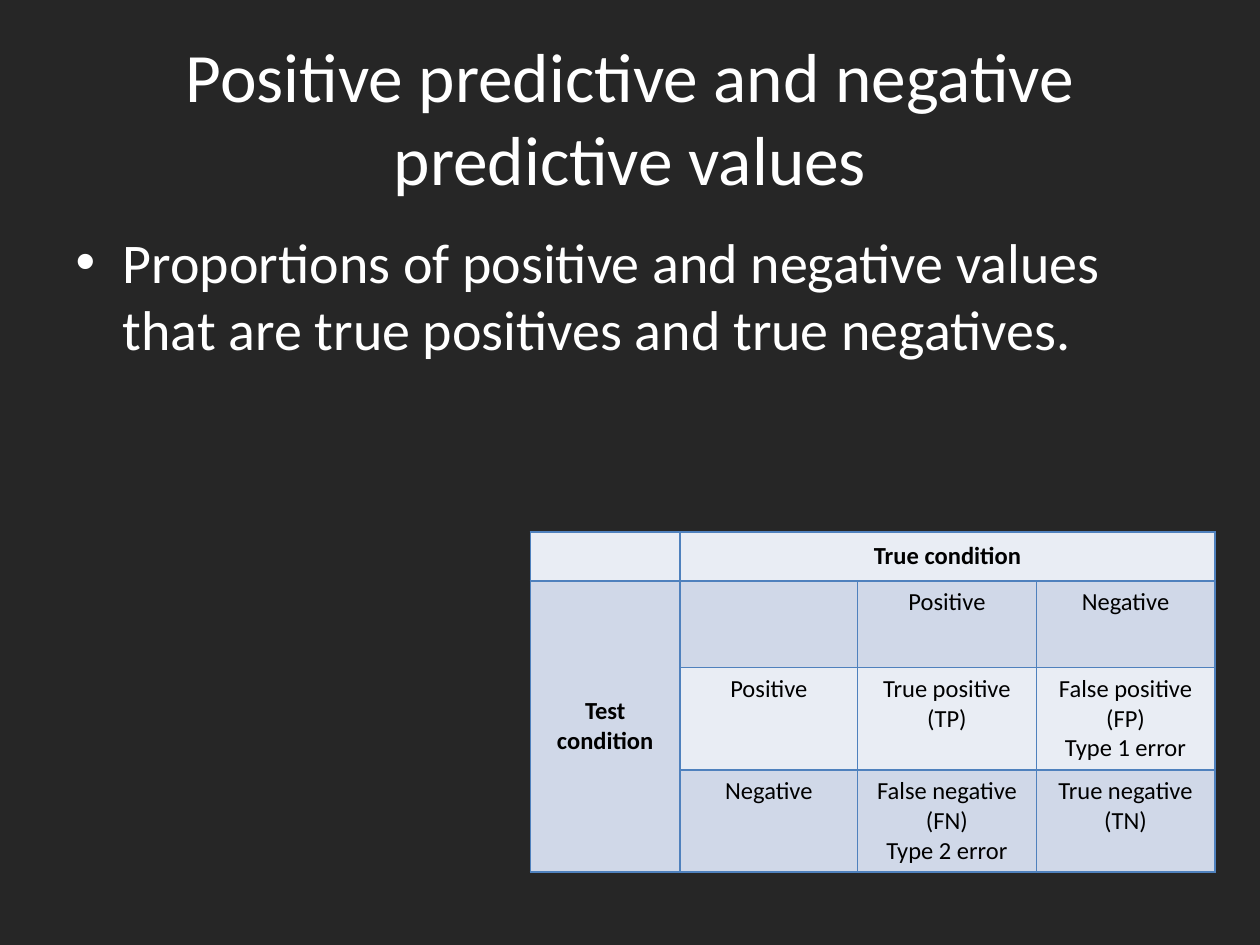
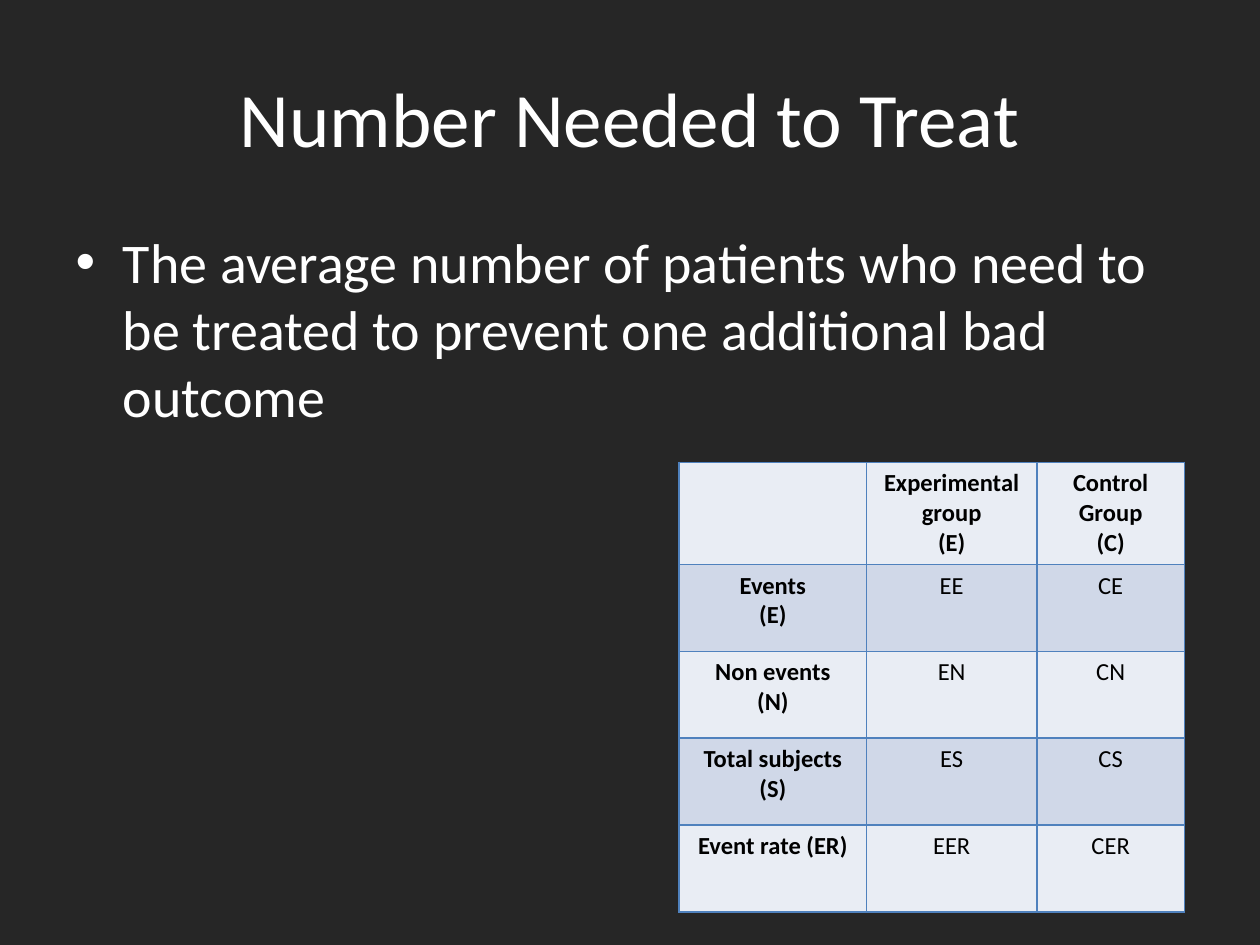
from lxml import etree
from pptx import Presentation
from pptx.dml.color import RGBColor
from pptx.enum.text import MSO_ANCHOR, MSO_AUTO_SIZE, PP_ALIGN
from pptx.oxml.ns import qn
from pptx.util import Cm, Pt

CENTER, LEFT = PP_ALIGN.CENTER, PP_ALIGN.LEFT
TOP, MIDDLE = MSO_ANCHOR.TOP, MSO_ANCHOR.MIDDLE
NO_FIT = MSO_AUTO_SIZE.NONE

COLORS = {
    "background": "262626",
    "light_text": "FFFFFF",
    "dark_text": "000000",
    "light_band": "E9EDF4",
    "dark_band": "D0D8E8",
    "border": "4F81BD",
}
FONT = "Calibri"
TITLE_AND_CONTENT = 1


def rgb(name):
    return RGBColor.from_string(COLORS[name])


def write(frame, text, size=14, color="dark_text", bold=False, align=CENTER):
    for index, line in enumerate(text.split("\n")):
        paragraph = frame.paragraphs[0] if index == 0 else frame.add_paragraph()
        paragraph.alignment = align
        run = paragraph.add_run()
        run.text = line
        run.font.name = FONT
        run.font.size = Pt(size)
        run.font.bold = bold
        run.font.color.rgb = rgb(color)


def outline(cell, width=1):
    properties = cell._tc.get_or_add_tcPr()
    for side in ("lnL", "lnR", "lnT", "lnB"):
        line = etree.SubElement(properties, qn(f"a:{side}"), w=str(Pt(width)))
        fill = etree.SubElement(line, qn("a:solidFill"))
        etree.SubElement(fill, qn("a:srgbClr"), val=COLORS["border"])


class Deck:
    def __init__(self):
        self.presentation = Presentation()
        self.presentation.slide_width = Cm(25.4)
        self.presentation.slide_height = Cm(19.05)
        background = self.presentation.slide_master.background.fill
        background.solid()
        background.fore_color.rgb = rgb("background")
        self.slide = None

    def add_slide(self):
        layout = self.presentation.slide_layouts[TITLE_AND_CONTENT]
        self.slide = self.presentation.slides.add_slide(layout)

    def fill_placeholder(self, placeholder, text, top, height, **style):
        placeholder.left, placeholder.top = Cm(1.27), Cm(top)
        placeholder.width, placeholder.height = Cm(22.86), Cm(height)
        placeholder.text_frame.auto_size = NO_FIT
        write(placeholder.text_frame, text, color="light_text", **style)

    def title(self, text, size=44):
        heading = self.slide.shapes.title
        self.fill_placeholder(heading, text, 0.76, 3.18, size=size)
        heading.text_frame.vertical_anchor = MIDDLE

    def bullet(self, text):
        self.fill_placeholder(self.slide.placeholders[1], text, 4.45, 12.57,
                              size=32, align=LEFT)

    def table(self, rows, left, top, widths, heights, merges=()):
        grid = self.slide.shapes.add_table(
            len(rows), len(widths), Cm(left), Cm(top),
            Cm(sum(widths)), Cm(sum(heights))).table
        grid.first_row = grid.horz_banding = False
        for column, width in zip(grid.columns, widths):
            column.width = Cm(width)
        for row, height in zip(grid.rows, heights):
            row.height = Cm(height)
        for first, last in merges:
            grid.cell(*first).merge(grid.cell(*last))
        for r, labels in enumerate(rows):
            for c, label in enumerate(labels):
                cell = grid.cell(r, c)
                outline(cell)
                cell.fill.solid()
                cell.fill.fore_color.rgb = rgb("dark_band" if r % 2 else "light_band")
                cell.vertical_anchor = MIDDLE if cell.is_merge_origin else TOP
                if not cell.is_spanned:
                    write(cell.text_frame, label, bold=r == 0 or c == 0)


def predictive_values(deck):
    deck.add_slide()
    deck.title("Positive predictive and negative predictive values", size=39.6)
    deck.bullet("Proportions of positive and negative values that are "
                "true positives and true negatives.")
    outcomes = [
        ["", "True condition", "", ""],
        ["Test condition", "", "Positive", "Negative"],
        ["", "Positive", "True positive (TP)", "False positive (FP)\nType 1 error"],
        ["", "Negative", "False negative (FN)\nType 2 error", "True negative (TN)"],
    ]
    deck.table(outcomes, 10.69, 10.72, [3.02, 3.58, 3.6, 3.6],
               [0.99, 1.75, 2.06, 2.06],
               merges=[((0, 1), (0, 3)), ((1, 0), (3, 0))])


def number_needed_to_treat(deck):
    deck.add_slide()
    deck.title("Number Needed to Treat")
    deck.bullet("The average number of patients who need to be treated "
                "to prevent one additional bad outcome")
    groups = [
        ["", "Experimental group\n(E)", "Control Group\n(C)"],
        ["Events\n(E)", "EE", "CE"],
        ["Non events\n(N)", "EN", "CN"],
        ["Total subjects\n(S)", "ES", "CS"],
        ["Event rate (ER)", "EER", "CER"],
    ]
    deck.table(groups, 13.69, 9.32, [3.78, 3.43, 2.98], [2.06] + [1.75] * 4)


def main():
    deck = Deck()
    predictive_values(deck)
    number_needed_to_treat(deck)
    deck.presentation.save("out.pptx")


if __name__ == "__main__":
    main()
